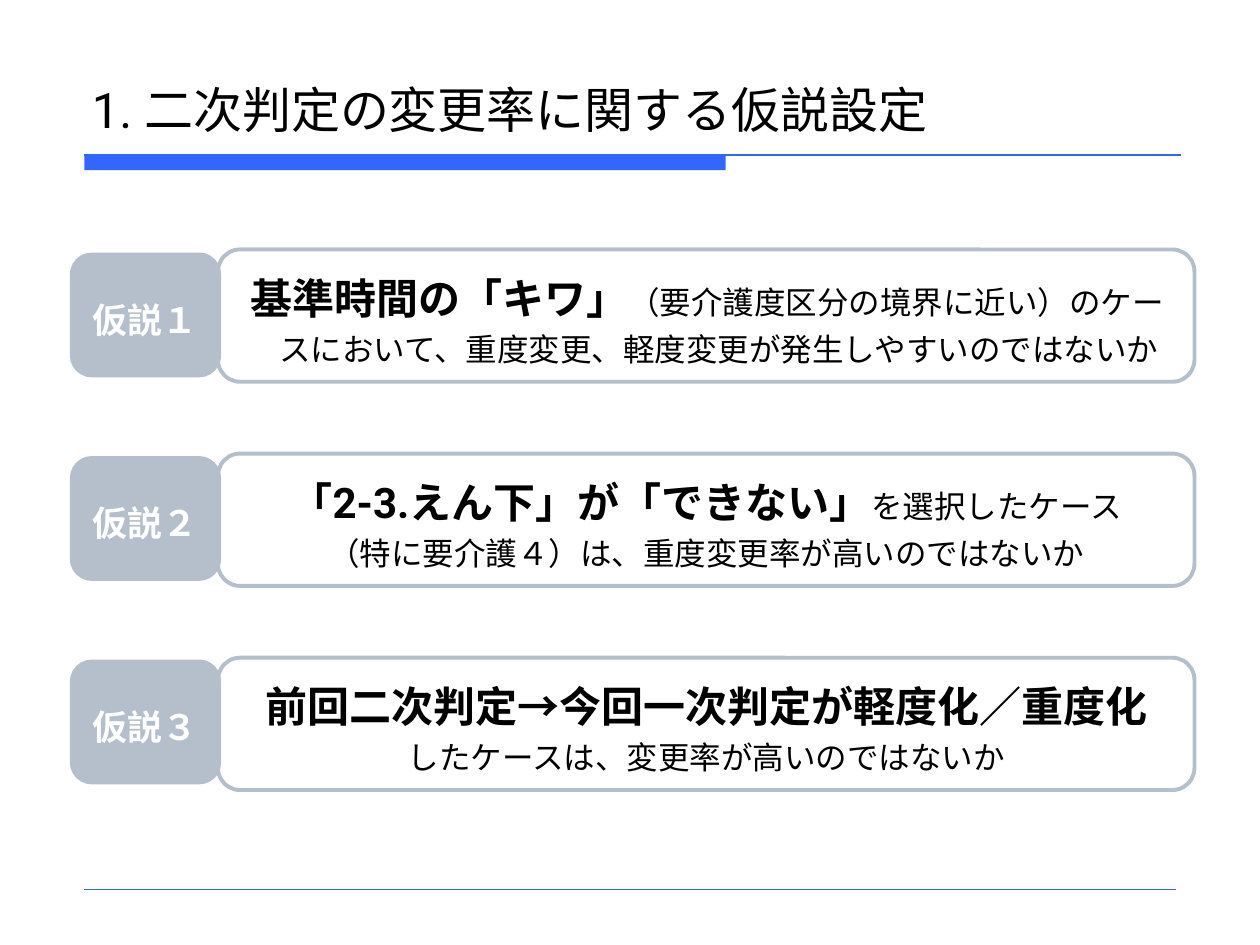
import pptx
import pptx.dml.color
import pptx.enum.shapes
import pptx.enum.text
import pptx.oxml
import pptx.oxml.ns
import pptx.util

Pt = pptx.util.Pt
Kind = pptx.enum.shapes.MSO_SHAPE
Anchor = pptx.enum.text.MSO_ANCHOR
Fit = pptx.enum.text.MSO_AUTO_SIZE
Align = pptx.enum.text.PP_ALIGN

theme = {
    "font": "Roboto",
    "ink": "000000",
    "white": "FFFFFF",
    "blue": "3366FF",
    "gray": "B5BFCC",
    "title": 28,
    "key": 24,
    "label": 20,
    "body": 18,
}

deck = pptx.Presentation()
deck.slide_width, deck.slide_height = Pt(720), Pt(540)
slide = deck.slides.add_slide(deck.slide_layouts[6])
shapes = slide.shapes


def color(name):
    return pptx.dml.color.RGBColor.from_string(theme[name])


def write(frame, lines, look, hang=0):
    for name, value in look.items():
        setattr(frame, name, value)
    for i, line in enumerate(lines):
        para = frame.paragraphs[0] if i == 0 else frame.add_paragraph()
        para.alignment = Align.CENTER if hang else Align.LEFT
        if hang:
            para.line_spacing = 1.2
            props = para._p.get_or_add_pPr()
            props.set("marL", str(Pt(hang)))
            props.set("indent", str(Pt(-hang)))
        for text, size, bold, ink in line:
            run = para.add_run()
            run.text = text
            style = {"name": theme["font"], "size": Pt(theme[size]), "bold": bold}
            for name, value in style.items():
                setattr(run.font, name, value)
            run.font.color.rgb = color(ink)


left = 48.24
bar = shapes.add_shape(Kind.RECTANGLE, Pt(left), Pt(88.56), Pt(366.5), Pt(8.64))
bar.shadow.inherit = False
bar.fill.solid()
bar.fill.fore_color.rgb = color("blue")
bar.line.fill.background()

for right, y, width in [(674.64, 88.56, 0.75), (671.76, 508.32, 0.25)]:
    rule = shapes.add_connector(
        pptx.enum.shapes.MSO_CONNECTOR.STRAIGHT, Pt(left), Pt(y), Pt(right), Pt(y)
    )
    rule.line.color.rgb = color("blue")
    rule.line.width = Pt(width)
    rule._element.spPr.append(pptx.oxml.parse_xml(
        "<a:effectLst %s/>" % pptx.oxml.ns.nsdecls("a")
    ))

title = shapes.add_textbox(Pt(45.36), Pt(23.76), Pt(630), Pt(59.04))
write(
    title.text_frame,
    [[("1. 二次判定の変更率に関する仮説設定", "title", False, "ink")]],
    {"word_wrap": True, "vertical_anchor": Anchor.BOTTOM},
)

claims = [
    ("仮説１", [[
        ("基準時間の「キワ」", "key", True, "ink"),
        ("（要介護度区分の境界に近い）のケースにおいて、重度変更、軽度変更が発生しやすいのではないか",
         "body", False, "ink"),
    ]]),
    ("仮説２", [
        [("「2-3.えん下」が「できない」", "key", True, "ink"),
         ("を選択したケース", "body", False, "ink")],
        [("（特に要介護４）は、重度変更率が高いのではないか", "body", False, "ink")],
    ]),
    ("仮説３", [
        [("前回二次判定→今回一次判定が軽度化／重度化", "key", True, "ink")],
        [("したケースは、変更率が高いのではないか", "body", False, "ink")],
    ]),
]
box_look = {"word_wrap": True, "vertical_anchor": Anchor.TOP,
            "auto_size": Fit.SHAPE_TO_FIT_TEXT}
tag_look = {"word_wrap": True, "vertical_anchor": Anchor.MIDDLE}

parts = []
for i, (label, lines) in enumerate(claims):
    parts.append((124.56, 142.56 + 116.64 * i, 558, 75.6, "white", lines, box_look))
for i, (label, lines) in enumerate(claims):
    name = [[(label, "label", True, "white")]]
    parts.append((41.04, 145.44 + 116.3 * i, 84.24, 69.12, "gray", name, tag_look))

for x, y, width, height, fill, lines, look in parts:
    card = shapes.add_shape(
        Kind.ROUNDED_RECTANGLE, Pt(x), Pt(y), Pt(width), Pt(height)
    )
    card.shadow.inherit = False
    card.fill.solid()
    card.fill.fore_color.rgb = color(fill)
    card.line.color.rgb = color("gray")
    card.line.width = Pt(2.25)
    write(card.text_frame, lines, look, hang=14.4)

deck.save("out.pptx")
